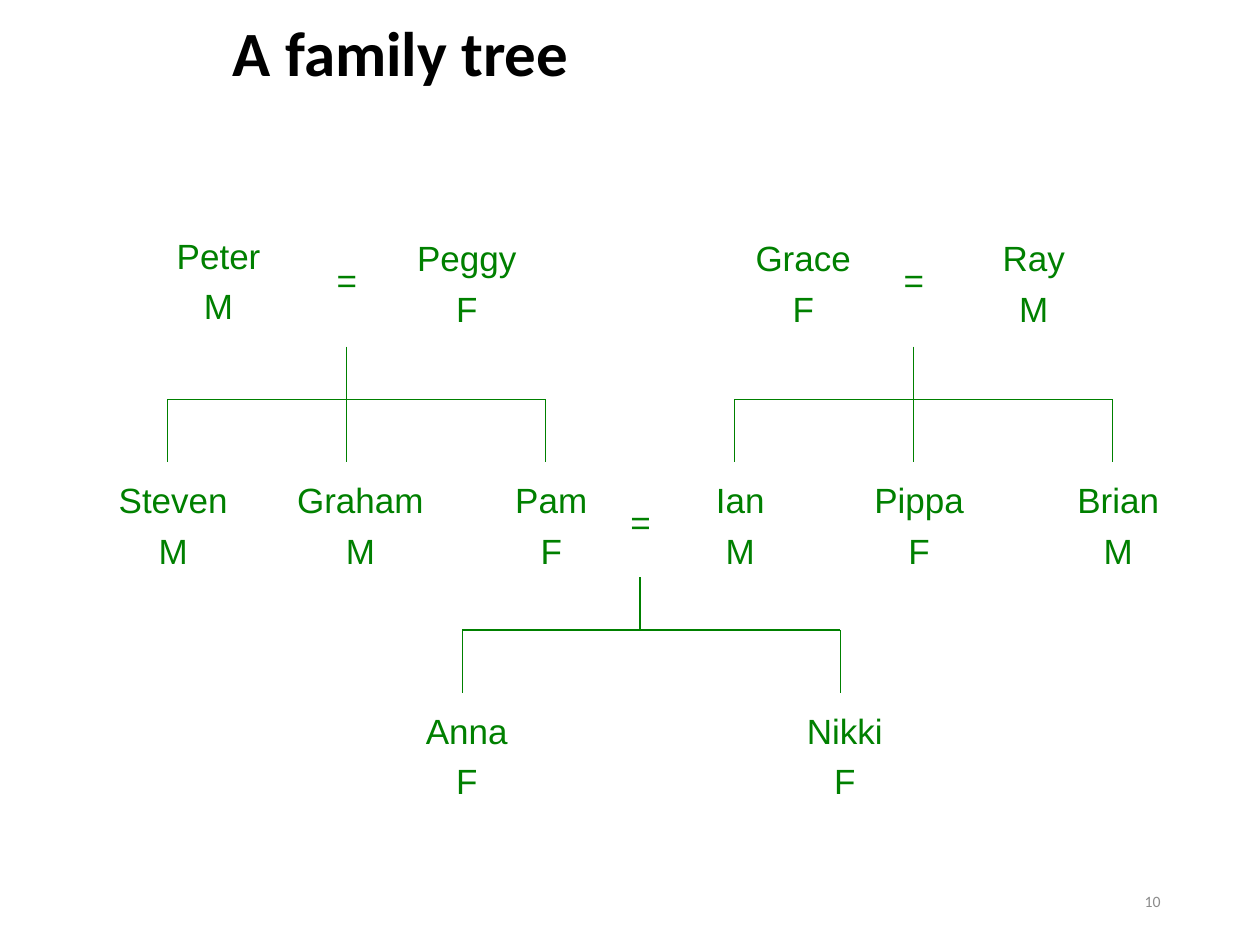
from dataclasses import dataclass

import pptx
import pptx.dml.color
import pptx.enum.shapes
import pptx.enum.text
import pptx.oxml.ns
import pptx.util
from lxml import etree
from pptx.util import Inches

GREEN = pptx.dml.color.RGBColor(0x00, 0x80, 0x00)
BLACK = pptx.dml.color.RGBColor(0x00, 0x00, 0x00)
GREY = pptx.dml.color.RGBColor(0x8C, 0x8C, 0x8C)
ALIGN = pptx.enum.text.PP_ALIGN
ANCHOR = pptx.enum.text.MSO_ANCHOR

# Rows of the tree and sizes shared by its parts, in inches
GRANDPARENTS, PARENTS, CHILDREN = 1.83, 3.75, 5.58
PERSON_WIDTH, PERSON_HEIGHT = 1.25, 0.83
MARRIAGE_WIDTH, MARRIAGE_HEIGHT, MARRIAGE_DROP = 0.67, 0.42, 0.17
BAR_WIDTH, CHILD_DROP = 3, 0.5


@dataclass(frozen=True)
class Style:
    size: float
    font: str
    color: pptx.dml.color.RGBColor
    align: ALIGN = ALIGN.CENTER
    anchor: ANCHOR = ANCHOR.TOP
    bold: bool = False
    italic: bool = False
    space_before: float = 0
    line_spacing: float = 1.0


@dataclass(frozen=True)
class Person:
    name: str
    sex: str
    left: float
    top: float
    width: float = PERSON_WIDTH


@dataclass(frozen=True)
class Family:
    """A marriage and the bracket that leads to its children."""
    center: float
    row: float
    stem_top: float
    stem_bottom: float
    bar_left: float
    bar_y: float


TITLE = Style(36, "Calibri", BLACK, ALIGN.LEFT, ANCHOR.MIDDLE, bold=True, line_spacing=0.9)
PAGE_NUMBER = Style(9, "Calibri", GREY, ALIGN.RIGHT, ANCHOR.MIDDLE)
PERSON = Style(20, "Arial", GREEN, space_before=5)
MARRIAGE = Style(20, "Arial", GREEN, italic=True, space_before=5)

PEOPLE = [
    Person("Peter", "M", 1.11, 1.81),
    Person("Peggy", "F", 3.08, GRANDPARENTS),
    Person("Grace", "F", 5.75, GRANDPARENTS),
    Person("Ray", "M", 7.58, GRANDPARENTS),
    Person("Steven", "M", 0.75, PARENTS),
    Person("Graham", "M", 2.17, PARENTS, width=1.38),
    Person("Pam", "F", 3.75, PARENTS),
    Person("Ian", "M", 5.25, PARENTS),
    Person("Pippa", "F", 6.67, PARENTS),
    Person("Brian", "M", 8.25, PARENTS),
    Person("Anna", "F", 3.08, CHILDREN),
    Person("Nikki", "F", 6.08, CHILDREN),
]

# With three children the stem runs on to the middle child
FAMILIES = [
    Family(2.75, GRANDPARENTS, 2.75, 3.67, 1.33, 3.17),
    Family(7.25, GRANDPARENTS, 2.75, 3.67, 5.83, 3.17),
    Family(5.08, PARENTS, 4.58, 5, 3.67, 5),
]


def add_text(slide, lines: list[str], left: float, top: float,
             width: float, height: float, style: Style) -> None:
    box = slide.shapes.add_textbox(Inches(left), Inches(top), Inches(width), Inches(height))
    frame = box.text_frame
    frame.word_wrap = True
    frame.vertical_anchor = style.anchor
    for index, line in enumerate(lines):
        paragraph = frame.add_paragraph() if index else frame.paragraphs[0]
        paragraph.alignment = style.align
        paragraph.space_before = pptx.util.Pt(style.space_before)
        paragraph.line_spacing = style.line_spacing
        run = paragraph.add_run()
        run.text = line
        run.font.size = pptx.util.Pt(style.size)
        run.font.name = style.font
        run.font.bold = style.bold
        run.font.italic = style.italic
        run.font.color.rgb = style.color


def add_line(slide, x1: float, y1: float, x2: float, y2: float) -> None:
    line = slide.shapes.add_connector(
        pptx.enum.shapes.MSO_CONNECTOR.STRAIGHT,
        Inches(x1), Inches(y1), Inches(x2), Inches(y2))
    line.line.color.rgb = GREEN
    line.line.width = pptx.util.Pt(0.75)
    etree.SubElement(line._element.spPr, pptx.oxml.ns.qn("a:effectLst"))


def add_person(slide, person: Person) -> None:
    add_text(slide, [person.name, person.sex], person.left, person.top,
             person.width, PERSON_HEIGHT, PERSON)


def add_family(slide, family: Family) -> None:
    add_text(slide, ["="], family.center - MARRIAGE_WIDTH / 2, family.row + MARRIAGE_DROP,
             MARRIAGE_WIDTH, MARRIAGE_HEIGHT, MARRIAGE)
    bar_right = family.bar_left + BAR_WIDTH
    add_line(slide, family.center, family.stem_top, family.center, family.stem_bottom)
    add_line(slide, family.bar_left, family.bar_y, bar_right, family.bar_y)
    for x in (family.bar_left, bar_right):
        add_line(slide, x, family.bar_y, x, family.bar_y + CHILD_DROP)


def main() -> None:
    deck = pptx.Presentation()
    deck.slide_width, deck.slide_height = Inches(10), Inches(7.5)
    slide = deck.slides.add_slide(deck.slide_layouts[6])

    # Title and page number
    add_text(slide, ["A family tree"], 1.75, -0.09, 8.25, 1.07, TITLE)
    add_text(slide, ["10"], 7.06, 6.95, 2.25, 0.4, PAGE_NUMBER)

    # Family tree
    for family in FAMILIES:
        add_family(slide, family)
    for person in PEOPLE:
        add_person(slide, person)

    deck.save("out.pptx")


if __name__ == "__main__":
    main()
